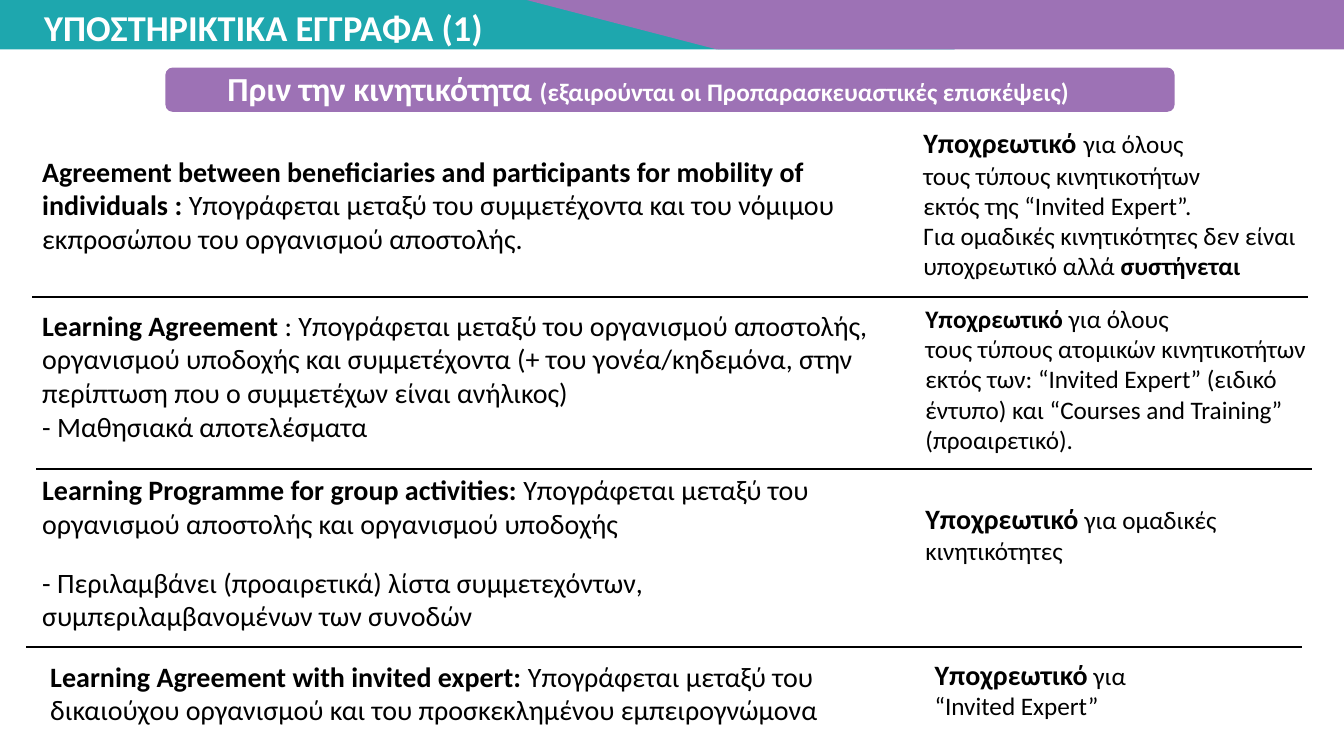
import pptx
import pptx.util
import pptx.dml.color
import pptx.enum.shapes
import pptx.enum.text
import pptx.oxml.ns
import lxml.etree

Inches, Pt = pptx.util.Inches, pptx.util.Pt
Kind = pptx.enum.shapes.MSO_SHAPE
Align = pptx.enum.text.PP_ALIGN

TEAL, PURPLE, WHITE, BLACK = "1EA7AE", "9D72B5", "FFFFFF", "000000"

# Content: a paragraph is a list of runs (text, size, bold)
TITLE = [[("ΥΠΟΣΤΗΡΙΚΤΙΚΑ ΕΓΓΡΑΦΑ (1)", 26, True)]]
PHASE = [[("Πριν την κινητικότητα ", 24, True),
          ("(εξαιρούνται οι Προπαρασκευαστικές επισκέψεις)", 18, True)]]

# Document rows: (box, paragraphs, space after) on the left, (box, paragraphs) on the right
DOCS = [
    ((0.32, 1.48, 8.75, 1.11), [
        [("Agreement between beneficiaries and participants for mobility of individuals : ", 20, True),
         ("Υπογράφεται μεταξύ του συμμετέχοντα και του νόμιμου εκπροσώπου "
          "του οργανισμού αποστολής.", 20, False)]], 0),
    ((0.32, 3.01, 8.64, 1.75), [
        [("Learning Agreement ", 20, True),
         (": Υπογράφεται μεταξύ του οργανισμού αποστολής, οργανισμού υποδοχής και "
          "συμμετέχοντα (+ του γονέα/κηδεμόνα, στην περίπτωση που ο συμμετέχων "
          "είναι ανήλικος)", 20, False)],
        [("- Μαθησιακά αποτελέσματα", 20, False)]], 0),
    ((0.32, 4.64, 8.8, 1.7), [
        [("Learning Programme for group activities: ", 20, True),
         ("Υπογράφεται μεταξύ του οργανισμού αποστολής και οργανισμού υποδοχής", 20, False)],
        [("- Περιλαμβάνει (προαιρετικά) λίστα συμμετεχόντων, "
          "συμπεριλαμβανομένων των συνοδών", 20, False)]], 18),
    ((0.4, 6.49, 8.64, 1.08), [
        [("Learning Agreement with invited expert: ", 20, True),
         ("Υπογράφεται μεταξύ του δικαιούχου οργανισμού και του "
          "προσκεκλημένου εμπειρογνώμονα", 20, False)]], 0),
]
RULES = [
    ((9.06, 1.17, 3.94, 1.68), [
        [("Υποχρεωτικό", 20, True), (" ", 22, False), ("για όλους", 18, False)],
        [("τους τύπους κινητικοτήτων", 18, False)],
        [("εκτός της “Invited Expert”.", 18, False)],
        [("Για ομαδικές κινητικότητες δεν είναι υποχρεωτικό αλλά ", 18, False),
         ("συστήνεται", 18, True)]]),
    ((9.08, 2.96, 4.11, 1.62), [
        [("Υποχρεωτικό", 18, True), (" για όλους", 18, False)],
        [("τους τύπους ατομικών κινητικοτήτων", 18, False)],
        [("εκτός των: “Invited Expert” (ειδικό έντυπο) και “Courses and Training” "
          "(προαιρετικό).", 18, False)]]),
    ((9.08, 4.93, 3.12, 0.74), [
        [("Υποχρεωτικό", 20, True), (" για ομαδικές", 18, False)],
        [("κινητικότητες", 18, False)]]),
    ((9.17, 6.47, 2.18, 0.74), [
        [("Υποχρεωτικό", 20, True), (" για", 18, False)],
        [("“Invited Expert”", 18, False)]]),
]

# Lines between rows: left end and height, all of one width
LINES = [(0.32, 2.95), (0.36, 4.65), (0.26, 6.42)]
SPAN = 12.65

# Bands: preset, box, turn, fill
BANDS = [
    (Kind.RECTANGLE, (0, -0.04, 9.47, 0.53), 0, TEAL),
    (Kind.RECTANGLE, (7.12, -0.04, 6.21, 0.53), 180, PURPLE),
    (Kind.ISOSCELES_TRIANGLE, (5.07, -0.04, 4, 0.53), 180, PURPLE),
    (Kind.ROUNDED_RECTANGLE, (1.64, 0.67, 10.01, 0.44), 0, PURPLE),
]


def color(code):
    return pptx.dml.color.RGBColor.from_string(code)


def add_band(slide, kind, box, turn, fill):
    band = slide.shapes.add_shape(kind, *map(Inches, box))
    band.shadow.inherit = False
    band.rotation = turn
    band.fill.solid()
    band.fill.fore_color.rgb = color(fill)
    band.line.fill.background()
    if kind == Kind.ISOSCELES_TRIANGLE:
        band.adjustments[0] = 0.49


def add_text(slide, box, paras, ink=BLACK, align=Align.LEFT, gap=0):
    frame = slide.shapes.add_textbox(*map(Inches, box)).text_frame
    frame.word_wrap = True
    for i, runs in enumerate(paras):
        para = frame.add_paragraph() if i else frame.paragraphs[0]
        para.alignment = align
        if gap and i < len(paras) - 1:
            para.space_after = Pt(gap)
        for text, size, bold in runs:
            run = para.add_run()
            run.text = text
            run.font.name = "Calibri"
            run.font.size = Pt(size)
            run.font.bold = bold
            run.font.color.rgb = color(ink)


def add_line(slide, left, top):
    line = slide.shapes.add_connector(
        pptx.enum.shapes.MSO_CONNECTOR.STRAIGHT,
        *map(Inches, (left, top, left + SPAN, top)))
    line.line.color.rgb = color(BLACK)
    line.line.width = Pt(1.5)
    props = line.element.find(pptx.oxml.ns.qn("p:spPr"))
    lxml.etree.SubElement(props, pptx.oxml.ns.qn("a:effectLst"))


def main():
    deck = pptx.Presentation()
    deck.slide_width, deck.slide_height = Inches(13.33), Inches(7.5)
    slide = deck.slides.add_slide(deck.slide_layouts[6])

    # Header
    for band in BANDS:
        add_band(slide, *band)
    add_text(slide, (0.34, 0, 5.05, 0.54), TITLE, WHITE)
    add_text(slide, (1.76, 0.62, 9.34, 0.5), PHASE, WHITE, Align.CENTER)

    # Rows
    for left, top in LINES:
        add_line(slide, left, top)
    for box, paras, gap in DOCS:
        add_text(slide, box, paras, gap=gap)
    for box, paras in RULES:
        add_text(slide, box, paras)

    deck.save("out.pptx")


if __name__ == "__main__":
    main()
